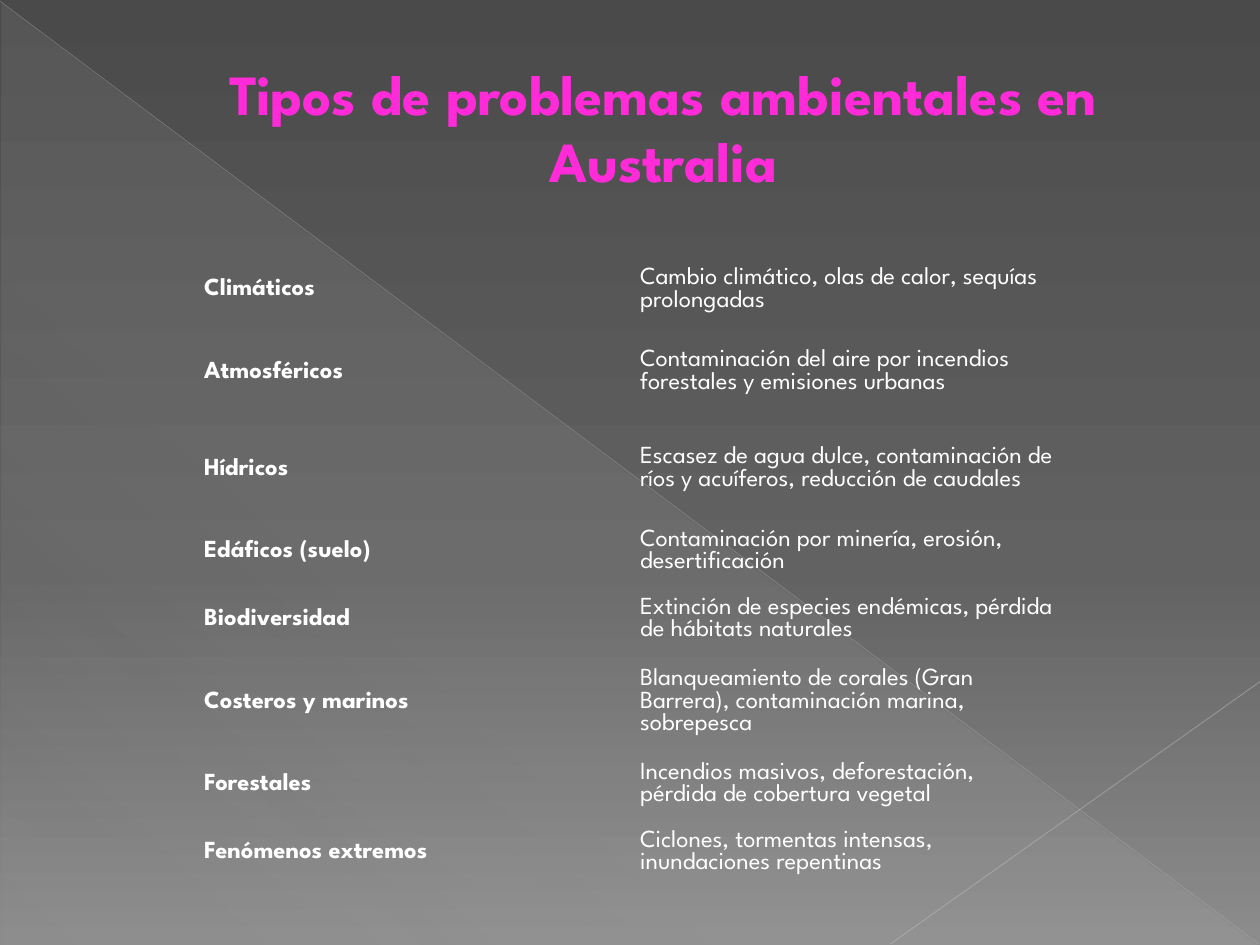
from lxml.etree import SubElement
from pptx import Presentation
from pptx.dml.color import RGBColor
from pptx.enum.shapes import MSO_CONNECTOR as Connector, MSO_SHAPE as Shape
from pptx.enum.text import MSO_ANCHOR as Anchor, PP_ALIGN as Align
from pptx.oxml.ns import qn
from pptx.util import Inches, Pt

FONT = "League Spartan"
TITLE = "Tipos de problemas ambientales en Australia"
PROBLEMS = [
    ("Climáticos", "Cambio climático, olas de calor, sequías prolongadas", 0.54),
    ("Atmosféricos", "Contaminación del aire por incendios forestales y emisiones urbanas", 0.77),
    ("Hídricos", "Escasez de agua dulce, contaminación de ríos y acuíferos, reducción de caudales", 0.77),
    ("Edáficos (suelo)", "Contaminación por minería, erosión, desertificación", 0.54),
    ("Biodiversidad", "Extinción de especies endémicas, pérdida de hábitats naturales", 0.54),
    ("Costeros y marinos", "Blanqueamiento de corales (Gran Barrera), contaminación marina, sobrepesca", 0.77),
    ("Forestales", "Incendios masivos, deforestación, pérdida de cobertura vegetal", 0.54),
    ("Fenómenos extremos", "Ciclones, tormentas intensas, inundaciones repentinas", 0.54),
]
BACKGROUND = [(0, "4A4A4A", 100), (60, "626262", 100), (100, "8C8C8C", 100)]
SHEEN = [(0, "D2D2D2", 10), (70, "D2D2D2", 8), (100, "D2D2D2", 1)]
DIAGONALS = [
    ((0, 0.01, 9.99, 7.49), "BFBFBF", 0.39, 35),
    ((10, 5.41, 7.07, 7.49), "C6C6C6", 0.47, 45),
]


def color(value):
    """Turn a hex string into a colour."""
    return RGBColor.from_string(value)


def add_alpha(node, percent):
    """Set the opacity of a colour element."""
    SubElement(node, qn("a:alpha")).set("val", str(percent * 1000))


def set_gradient(fill, owner, stops, angle):
    """Give a fill a linear gradient of (position, colour, opacity) stops."""
    fill.gradient()
    gradient = next(owner.iter(qn("a:gradFill")))
    stop_list = gradient.find(qn("a:gsLst"))
    for old in list(stop_list):
        stop_list.remove(old)
    for position, value, opacity in stops:
        stop = SubElement(stop_list, qn("a:gs"), pos=str(position * 1000))
        add_alpha(SubElement(stop, qn("a:srgbClr"), val=value), opacity)
    gradient.find(qn("a:lin")).set("ang", str(angle * 60000))


def style(para, size, value, bold):
    """Set the font of a paragraph."""
    font = para.font
    font.name, font.size, font.bold = FONT, Pt(size), bold
    font.color.rgb = color(value)


def add_backdrop(page):
    """Draw the gradient, the triangle and the two diagonals."""
    set_gradient(page.background.fill, page.element, BACKGROUND, 90)
    triangle = page.shapes.add_shape(
        Shape.RIGHT_TRIANGLE, *map(Inches, (0.01, 0.02, 9.98, 7.48)))
    triangle.shadow.inherit = False
    triangle.line.fill.background()
    set_gradient(triangle.fill, triangle.element, SHEEN, 133)
    for ends, value, width, opacity in DIAGONALS:
        line = page.shapes.add_connector(Connector.STRAIGHT, *map(Inches, ends))
        line.line.width = Pt(width)
        line.line.color.rgb = color(value)
        add_alpha(next(line.element.iter(qn("a:srgbClr"))), opacity)
        SubElement(line.element.spPr, qn("a:effectLst"))


def add_title(page):
    """Place and format the title."""
    title = page.shapes.title
    title.left, title.top, title.width, title.height = map(Inches, (0.5, 0.24, 9, 1.53))
    title.text_frame.text = TITLE
    title.text_frame.vertical_anchor = Anchor.MIDDLE
    para = title.text_frame.paragraphs[0]
    para.alignment = Align.CENTER
    para.line_spacing = Pt(38.3)
    properties = para._p.get_or_add_pPr()
    properties.set("marL", str(Inches(0.53)))
    properties.set("indent", "0")
    style(para, 32.4, "FF2BD8", True)


def add_problems(page):
    """Fill the table of problem types and examples."""
    table = page.shapes.add_table(
        len(PROBLEMS), 2, *map(Inches, (1.54, 2.03, 6.92, 5.05))).table
    table.first_row = table.horz_banding = False
    for row, (kind, examples, height) in zip(table.rows, PROBLEMS):
        row.height = Inches(height)
        for cell, text, bold in zip(row.cells, (kind, examples), (True, False)):
            cell.text = text
            cell.fill.background()
            cell.vertical_anchor = Anchor.MIDDLE
            cell.margin_left = cell.margin_right = Inches(0.08)
            cell.margin_top = cell.margin_bottom = Inches(0.04)
            style(cell.text_frame.paragraphs[0], 14, "FFFFFF", bold)
            borders = cell._tc.get_or_add_tcPr()
            for index, side in enumerate(("a:lnL", "a:lnR", "a:lnT", "a:lnB")):
                border = borders.makeelement(qn(side), {"w": "0"})
                SubElement(border, qn("a:noFill"))
                borders.insert(index, border)


def main():
    """Build and save the slide."""
    deck = Presentation()
    deck.slide_width, deck.slide_height = Inches(10), Inches(7.5)
    page = deck.slides.add_slide(deck.slide_layouts[5])
    add_backdrop(page)
    add_title(page)
    add_problems(page)
    deck.save("out.pptx")


if __name__ == "__main__":
    main()
